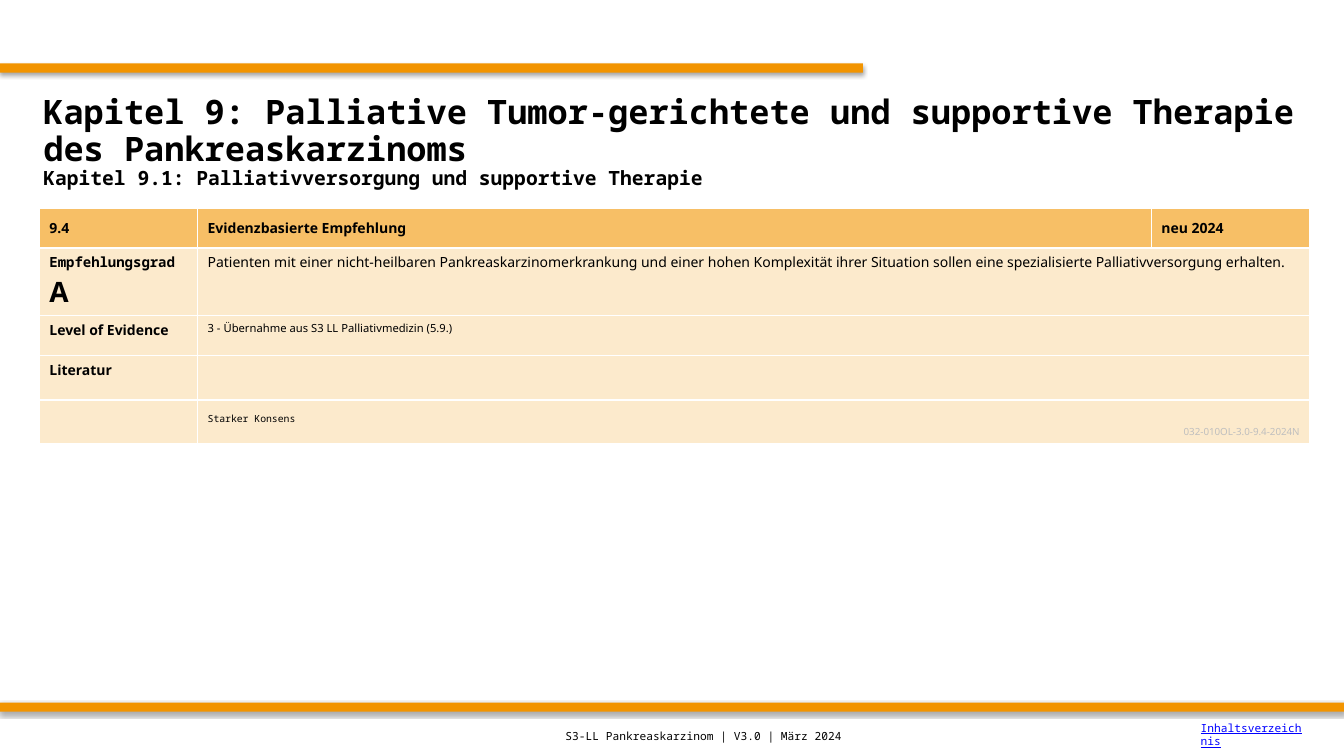
from pptx import Presentation
from pptx.dml.color import RGBColor
from pptx.enum import shapes, text
from pptx.oxml import parse_xml
from pptx.oxml.ns import nsdecls
from pptx.util import Inches, Pt

SANS, MONO = "Noto Sans", "Noto Sans Mono"
ORANGE, HEAD, BODY = "F29400", "F7BF66", "FCEACC"
MID, LOW = text.MSO_ANCHOR.MIDDLE, text.MSO_ANCHOR.BOTTOM
LEFT, RIGHT = text.PP_ALIGN.LEFT, text.PP_ALIGN.RIGHT


def paint(fmt, color):
    fmt.solid()
    fmt.fore_color.rgb = RGBColor.from_string(color)


def write(frame, lines):
    """Fill a text frame with (words, size, face, bold, color, align) lines."""
    for i, (words, size, face, bold, color, align) in enumerate(lines):
        para = frame.add_paragraph() if i else frame.paragraphs[0]
        para.text = words
        para.alignment = align
        font = para.font
        font.size, font.name, font.bold = Pt(size), face, bold
        font.color.rgb = RGBColor.from_string(color)


def line(words, size=10, face=SANS, bold=False, color="000000", align=LEFT):
    return words, size, face, bold, color, align


def add_bar(slide, box):
    bar = slide.shapes.add_shape(shapes.MSO_SHAPE.RECTANGLE, *map(Inches, box))
    paint(bar.fill, ORANGE)
    bar.line.fill.background()
    bar.shadow.inherit = False
    bar.element.spPr.remove(bar.element.spPr[-1])
    bar.element.spPr.append(parse_xml(
        f'<a:effectLst {nsdecls("a")}><a:outerShdw blurRad="{Pt(3.1)}" '
        f'dist="{Pt(1.8)}" dir="5400000" rotWithShape="0"><a:srgbClr val="000000">'
        '<a:alpha val="35000"/></a:srgbClr></a:outerShdw></a:effectLst>'))


def add_title(slide, box):
    title = slide.shapes.title
    title.left, title.top, title.width, title.height = map(Inches, box)
    frame = title.text_frame
    frame.word_wrap, frame.vertical_anchor = True, MID
    frame.auto_size = text.MSO_AUTO_SIZE.NONE
    write(frame, [
        line("Kapitel 9: Palliative Tumor-gerichtete und supportive Therapie "
             "des Pankreaskarzinoms", 24, MONO, True),
        line("Kapitel 9.1: Palliativversorgung und supportive Therapie",
             14, MONO, True)])
    for para in frame.paragraphs:
        para.line_spacing = 0.9


def add_grid(slide, box):
    """Recommendation table: a header row, then label and merged content."""
    rows = [
        [[line("9.4", bold=True)],
         [line("Evidenzbasierte Empfehlung", bold=True)],
         [line("neu 2024", bold=True)]],
        [[line("Empfehlungsgrad", face=MONO, bold=True),
          line("A", 20, bold=True)],
         [line("Patienten mit einer nicht-heilbaren Pankreaskarzinomerkrankung "
               "und einer hohen Komplexität ihrer Situation sollen eine "
               "spezialisierte Palliativversorgung erhalten.")]],
        [[line("Level of Evidence", bold=True)],
         [line("3 - Übernahme aus S3 LL Palliativmedizin (5.9.)", 8)]],
        [[line("Literatur", bold=True)], [line("")]],
        [[line("")],
         [line("Starker Konsens", 7, MONO),
          line("032-010OL-3.0-9.4-2024N", 7, color="BFBFBF", align=RIGHT)]],
    ]
    grid = slide.shapes.add_table(len(rows), 3, *map(Inches, box)).table
    grid.horz_banding = False
    side = 1.57
    for col, width in zip(grid.columns, (side, box[2] - 2 * side, side)):
        col.width = Inches(width)
    for row, height in zip(grid.rows, (0.39, 0.66, 0.4, 0.44, 0.43)):
        row.height = Inches(height)
    for r, row in enumerate(rows):
        if r:
            grid.cell(r, 1).merge(grid.cell(r, 2))
        for c, lines in enumerate(row):
            cell = grid.cell(r, c)
            paint(cell.fill, BODY if r else HEAD)
            write(cell.text_frame, lines)
            if not r:
                cell.vertical_anchor = MID
    grid.cell(len(rows) - 1, 1).vertical_anchor = LOW


def add_note(slide, box, words, color="000000", under=False):
    frame = slide.shapes.add_textbox(*map(Inches, box)).text_frame
    frame.word_wrap, frame.vertical_anchor = True, MID
    write(frame, [line(words, 8, MONO, color=color)])
    frame.paragraphs[0].font.underline = under


def main():
    deck = Presentation()
    deck.slide_width, deck.slide_height = Inches(13.33), Inches(7.5)
    slide = deck.slides.add_slide(deck.slide_layouts[5])
    add_bar(slide, (0, 0.63, 8.56, 0.09))
    add_bar(slide, (0, 6.97, 13.33, 0.09))
    add_title(slide, (0.33, 0.83, 12.67, 1.17))
    add_grid(slide, (0.39, 2.07, 12.6, 2.32))
    add_note(slide, (5.51, 7.11, 5.51, 0.39),
             "S3-LL Pankreaskarzinom | V3.0 | März 2024")
    add_note(slide, (11.81, 7.09, 1.22, 0.39), "Inhaltsverzeichnis",
             "0000FF", True)
    deck.save("out.pptx")


if __name__ == "__main__":
    main()
